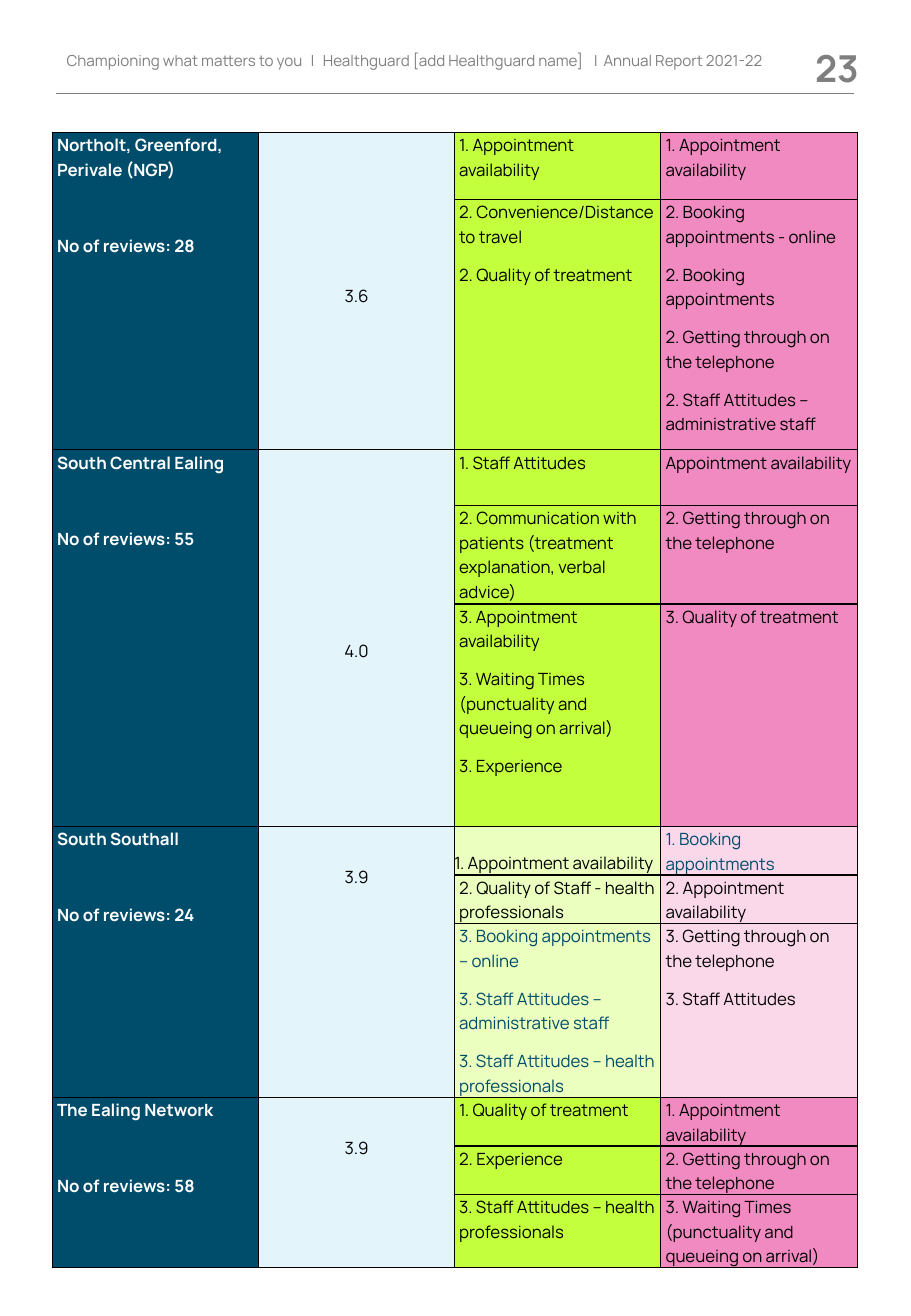
from dataclasses import dataclass

from lxml import etree
from pptx import Presentation
from pptx.dml.color import RGBColor
from pptx.enum import shapes, text
from pptx.oxml import ns
from pptx.util import Inches, Length, Pt


@dataclass(frozen=True)
class Theme:
    font: str = "Manrope"
    grey: str = "7F7F7F"
    navy: str = "004C6B"
    ice: str = "E3F4FB"
    lime: str = "C4FF3D"
    pale_lime: str = "EBFFBE"
    pink: str = "F08AC0"
    pale_pink: str = "FAD7E9"
    black: str = "000000"
    white: str = "FFFFFF"
    number_size: float = 22
    header_size: float = 9
    body_size: float = 10
    line_spacing: float = 1.07
    paragraph_gap: float = 8
    reviews_gap: float = 30.5


THEME = Theme()


@dataclass(frozen=True)
class Entry:
    lines: tuple[str, ...]
    fill: str
    color: str = THEME.black
    bold: bool = False
    gap: float = THEME.paragraph_gap
    centered: bool = False
    at_bottom: bool = False
    top: float = 0


def liked(*lines: str) -> Entry:
    return Entry(lines, THEME.lime)


def disliked(*lines: str) -> Entry:
    return Entry(lines, THEME.pink)


def pale_liked(*lines: str, color: str = THEME.black, at_bottom: bool = False) -> Entry:
    return Entry(lines, THEME.pale_lime, color, at_bottom=at_bottom)


def pale_disliked(*lines: str, color: str = THEME.black) -> Entry:
    return Entry(lines, THEME.pale_pink, color)


@dataclass(frozen=True)
class Theme_Row:
    height: float
    good: Entry
    bad: Entry


@dataclass(frozen=True)
class Area:
    name: str
    reviews: int
    score: str
    score_top: float
    rows: tuple[Theme_Row, ...]


COLUMNS = (1.7, 1.61, 1.7, 1.62)
TABLE_LEFT = 0.43

UPPER_AREAS = (
    Area("Northolt, Greenford, Perivale (NGP)", 28, "3.6", 1.24, (
        Theme_Row(0.55, liked("1. Appointment availability"), disliked("1. Appointment availability")),
        Theme_Row(2.06, liked("2. Convenience/Distance to travel", "2. Quality of treatment"),
                  disliked("2. Booking appointments - online", "2. Booking appointments",
                           "2. Getting through on the telephone",
                           "2. Staff Attitudes – administrative staff")),
    )),
    Area("South Central Ealing", 55, "4.0", 1.55, (
        Theme_Row(0.46, liked("1. Staff Attitudes"), disliked("Appointment availability")),
        Theme_Row(0.81, liked("2. Communication with patients (treatment explanation, verbal advice)"),
                  disliked("2. Getting through on the telephone")),
        Theme_Row(1.84, liked("3. Appointment availability",
                              "3. Waiting Times (punctuality and queueing on arrival)",
                              "3. Experience"),
                  disliked("3. Quality of treatment")),
    )),
)

LOWER_AREAS = (
    Area("South Southall", 24, "3.9", 0.31, (
        Theme_Row(0.4, pale_liked("1. Appointment availability", at_bottom=True),
                  pale_disliked("1. Booking appointments", color=THEME.navy)),
        Theme_Row(0.4, pale_liked("2. Quality of Staff - health professionals"),
                  pale_disliked("2. Appointment availability")),
        Theme_Row(1.43, pale_liked("3. Booking appointments – online",
                                   "3. Staff Attitudes – administrative staff",
                                   "3. Staff Attitudes – health professionals", color=THEME.navy),
                  pale_disliked("3. Getting through on the telephone", "3. Staff Attitudes")),
    )),
    Area("The Ealing Network", 58, "3.9", 0.31, (
        Theme_Row(0.4, liked("1. Quality of treatment"), disliked("1. Appointment availability")),
        Theme_Row(0.4, liked("2. Experience"), disliked("2. Getting through on the telephone")),
        Theme_Row(0.6, liked("3. Staff Attitudes – health professionals"),
                  disliked("3. Waiting Times (punctuality and queueing on arrival)")),
    )),
)


def style_paragraph(para, size: float, color: str, bold: bool = False) -> None:
    para.font.name = THEME.font
    para.font.size = Pt(size)
    para.font.bold = bold
    para.font.color.rgb = RGBColor.from_string(color)


def add_borders(cell) -> None:
    properties = cell._tc.get_or_add_tcPr()
    for side in ("lnL", "lnR", "lnT", "lnB"):
        line = etree.SubElement(properties, ns.qn(f"a:{side}"), w=str(Pt(1)))
        fill = etree.SubElement(line, ns.qn("a:solidFill"))
        etree.SubElement(fill, ns.qn("a:srgbClr"), val=THEME.black)


def paint_cell(cell, fill: str) -> None:
    add_borders(cell)
    cell.fill.solid()
    cell.fill.fore_color.rgb = RGBColor.from_string(fill)


def write_cell(cell, entry: Entry) -> None:
    side = Inches(0 if entry.at_bottom else 0.04)
    cell.margin_left = cell.margin_right = side
    cell.margin_top, cell.margin_bottom = Inches(entry.top), Inches(0)
    cell.vertical_anchor = text.MSO_ANCHOR.BOTTOM if entry.at_bottom else text.MSO_ANCHOR.TOP
    cell.text = "\n".join(entry.lines)
    for index, para in enumerate(cell.text_frame.paragraphs):
        style_paragraph(para, THEME.body_size, entry.color, entry.bold)
        para.alignment = text.PP_ALIGN.CENTER if entry.centered else text.PP_ALIGN.LEFT
        para.line_spacing = 1.0 if entry.at_bottom else THEME.line_spacing
        para.space_before = Pt(entry.gap if index else 0)


def add_area_table(page, top: float, areas: tuple[Area, ...]) -> None:
    heights = [row.height for area in areas for row in area.rows]
    table = page.shapes.add_table(len(heights), len(COLUMNS), Inches(TABLE_LEFT), Inches(top),
                                  Inches(sum(COLUMNS)), Inches(sum(heights))).table
    table.first_row = table.horz_banding = False
    for column, width in zip(table.columns, COLUMNS):
        column.width = Inches(width)
    for row, height in zip(table.rows, heights):
        row.height = Inches(height)
        for cell, fill in zip(row.cells, (THEME.navy, THEME.ice)):
            paint_cell(cell, fill)
    first = 0
    for area in areas:
        name = Entry((area.name, f"No of reviews: {area.reviews}"), THEME.navy, THEME.white,
                     bold=True, gap=THEME.reviews_gap)
        score = Entry((area.score,), THEME.ice, centered=True, top=area.score_top)
        last = first + len(area.rows) - 1
        for column, entry in enumerate((name, score)):
            table.cell(first, column).merge(table.cell(last, column))
            write_cell(table.cell(first, column), entry)
        for index, row in enumerate(area.rows, first):
            for column, entry in enumerate((row.good, row.bad), 2):
                paint_cell(table.cell(index, column), entry.fill)
                write_cell(table.cell(index, column), entry)
        first = last + 1


def add_text(page, left: float, width: float, words: str, size: float, inset: Length):
    box = page.shapes.add_textbox(Inches(left), Inches(0.37), Inches(width), Inches(0.39))
    frame = box.text_frame
    frame.word_wrap = True
    frame.margin_left = frame.margin_right = inset
    frame.margin_top = frame.margin_bottom = inset // 2
    para = frame.paragraphs[0]
    para.text = words
    return para


def add_header(page) -> None:
    rule = page.shapes.add_connector(shapes.MSO_CONNECTOR.STRAIGHT, Inches(0.46), Inches(0.77),
                                     Inches(7.03), Inches(0.77))
    rule.line.color.rgb = RGBColor.from_string(THEME.grey)
    rule.line.width = Pt(0.75)
    etree.SubElement(rule._element.spPr, ns.qn("a:effectLst"))
    number = add_text(page, 6.43, 0.64, "23", THEME.number_size, Inches(0))
    number.alignment = text.PP_ALIGN.RIGHT
    style_paragraph(number, THEME.number_size, THEME.grey, True)
    words = "Championing what matters to you\t|\tHealthguard [add Healthguard name]\t|\tAnnual Report 2021-22"
    title = add_text(page, 0.45, 6.61, words, THEME.header_size, Inches(0.1))
    tabs = etree.SubElement(title._p.get_or_add_pPr(), ns.qn("a:tabLst"))
    for stop in (2.01, 2.11, 4.34, 4.42):
        etree.SubElement(tabs, ns.qn("a:tab"), pos=str(Inches(stop)), algn="l")
    style_paragraph(title, THEME.header_size, THEME.grey)


def main() -> None:
    deck = Presentation()
    deck.slide_width, deck.slide_height = Inches(7.5), Inches(10.83)
    page = deck.slides.add_slide(deck.slide_layouts[6])
    add_header(page)
    add_area_table(page, 1.09, UPPER_AREAS)
    add_area_table(page, 6.8, LOWER_AREAS)
    deck.save("out.pptx")


if __name__ == "__main__":
    main()
